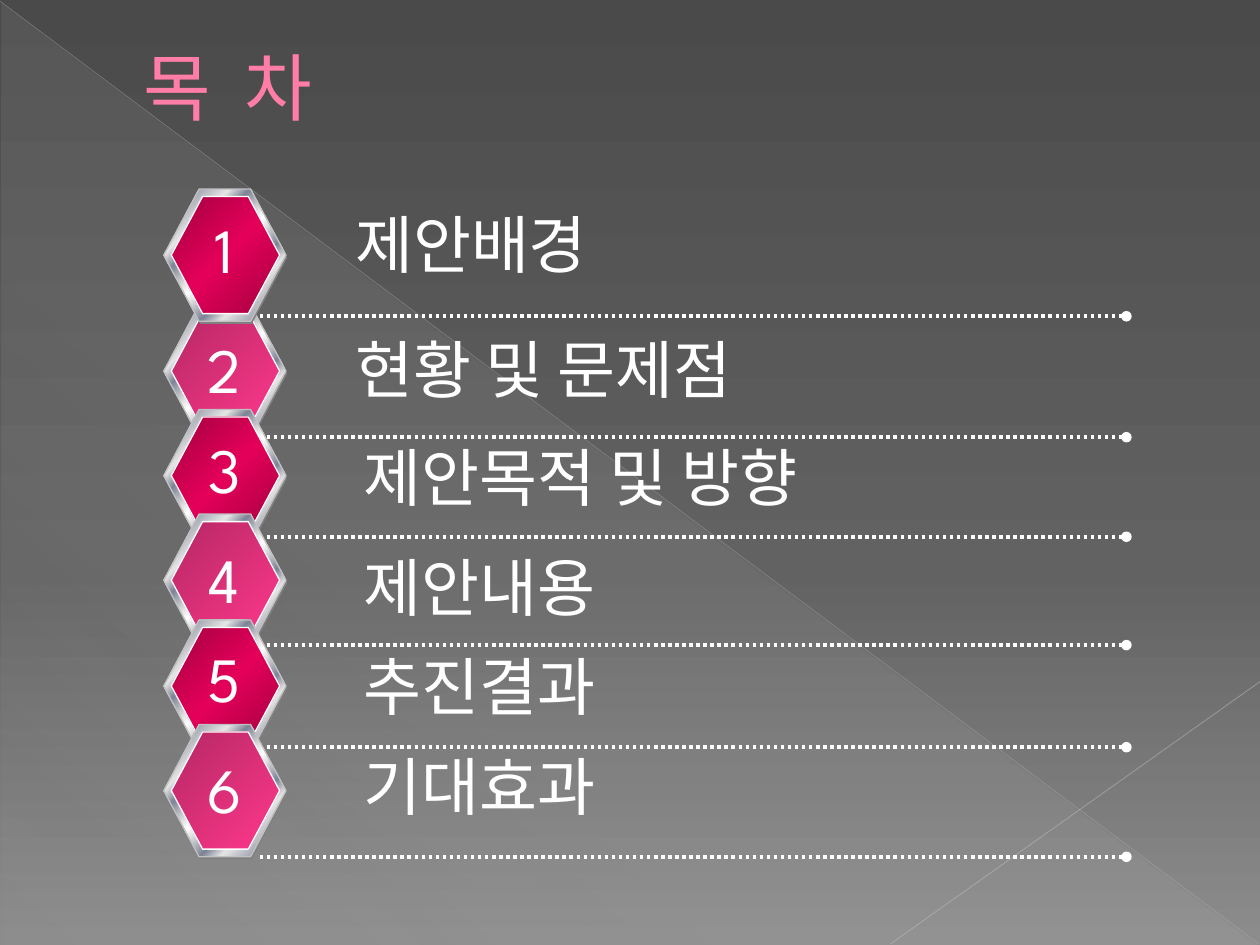
import typing
from dataclasses import dataclass

import lxml.etree
import pptx
import pptx.dml.color
import pptx.enum.dml
import pptx.enum.shapes
import pptx.enum.text
import pptx.oxml.ns
import pptx.util

RGB = pptx.dml.color.RGBColor
SHAPE = pptx.enum.shapes.MSO_SHAPE
PX = 9144  # EMU per px, 100 px to the inch

WHITE = RGB(0xFF, 0xFF, 0xFF)
TITLE_PINK = RGB(0xFF, 0x7D, 0xA7)
SHADE_GRAY = RGB(0x80, 0x80, 0x80)
RIM_GRAY = RGB(0xC0, 0xC0, 0xC0)
LONG_LINE_GRAY = RGB(0xBF, 0xBF, 0xBF)
SHORT_LINE_GRAY = RGB(0xC6, 0xC6, 0xC6)
VEIL_GRAY = RGB(0xD2, 0xD2, 0xD2)
SILVER = RGB(0xE6, 0xE6, 0xE6)
STEEL = RGB(0x7D, 0x84, 0x96)
CRIMSON_DARK = RGB(0xA3, 0x00, 0x40)
CRIMSON = RGB(0xE4, 0x00, 0x59)
PINK_DARK = RGB(0xB6, 0x28, 0x64)
PINK = RGB(0xFF, 0x38, 0x8C)

KOREAN_FONT = "Noto Sans CJK KR"
NUMBER_FONT = "League Spartan"


class Stop(typing.NamedTuple):
    position: int
    color: RGB
    opacity: int = 100


BACKGROUND = [Stop(0, RGB(0x4A, 0x4A, 0x4A)), Stop(60, RGB(0x62, 0x62, 0x62)),
              Stop(100, RGB(0x8C, 0x8C, 0x8C))]
VEIL = [Stop(0, VEIL_GRAY, 10), Stop(70, VEIL_GRAY, 8), Stop(100, VEIL_GRAY, 1)]
METAL_HALF = [Stop(0, SILVER), Stop(7, STEEL), Stop(26, SILVER), Stop(34, STEEL), Stop(46, SILVER)]
METAL = (METAL_HALF + [Stop(50, WHITE)]
         + [Stop(100 - s.position, s.color) for s in reversed(METAL_HALF)])
CRIMSON_FACE = [Stop(0, CRIMSON_DARK), Stop(50, CRIMSON), Stop(100, CRIMSON_DARK)]
PINK_FACE = [Stop(0, PINK_DARK), Stop(100, PINK)]


@dataclass(frozen=True)
class Box:
    left: int
    top: int
    width: int
    height: int

    def emu(self) -> list[int]:
        return [v * PX for v in (self.left, self.top, self.width, self.height)]


@dataclass(frozen=True)
class Entry:
    """One row of the contents; tops and rule are px from the slide top."""
    number: int
    heading: str
    heading_left: int
    heading_top: int
    badge_top: int
    number_top: int
    rule: int


# The first entry lies in front of the others.
ENTRIES = [
    Entry(2, "현황 및 문제점", 272, 257, 242, 257, 347),
    Entry(3, "제안목적 및 방향", 279, 343, 325, 337, 426),
    Entry(4, "제안내용", 279, 430, 408, 424, 512),
    Entry(5, "추진결과", 279, 509, 492, 503, 593),
    Entry(6, "기대효과", 279, 588, 575, 591, 680),
    Entry(1, "제안배경", 272, 158, 150, 162, 251),
]


def add_xml(parent, tag: str, **attributes: str):
    return lxml.etree.SubElement(parent, pptx.oxml.ns.qn(tag), **attributes)


def add_color(parent, color: RGB, opacity: int) -> None:
    srgb = add_xml(parent, "a:srgbClr", val=str(color))
    if opacity < 100:
        add_xml(srgb, "a:alpha", val=str(opacity * 1000))


def set_gradient(fill, stops: list[Stop], clockwise: int) -> None:
    fill.gradient()
    fill.gradient_angle = 360 - clockwise
    stop_list = fill._fill._gradFill.find(pptx.oxml.ns.qn("a:gsLst"))
    for old in list(stop_list):
        stop_list.remove(old)
    for stop in stops:
        add_color(add_xml(stop_list, "a:gs", pos=str(stop.position * 1000)),
                  stop.color, stop.opacity)


def add_preset(shapes, preset: SHAPE, box: Box):
    shape = shapes.add_shape(preset, *box.emu())
    shape.shadow.inherit = False
    shape.line.fill.background()
    return shape


def add_line(shapes, start: tuple[int, int], end: tuple[int, int],
             color: RGB, width: float, opacity: int = 100):
    line = shapes.add_connector(pptx.enum.shapes.MSO_CONNECTOR.STRAIGHT,
                                *[v * PX for v in start + end])
    line.line.width = pptx.util.Pt(width)
    line.line.color.rgb = color
    if opacity < 100:
        srgb = line.line._ln.find(".//" + pptx.oxml.ns.qn("a:srgbClr"))
        add_xml(srgb, "a:alpha", val=str(opacity * 1000))
    add_xml(line._element.spPr, "a:effectLst")
    return line


def add_text(shapes, box: Box, text: str, size: int, font: str, color: RGB, wrap: bool = True):
    textbox = shapes.add_textbox(*box.emu())
    frame = textbox.text_frame
    frame.word_wrap = wrap
    run = frame.paragraphs[0].add_run()
    run.text = text
    run.font.size = pptx.util.Pt(size)
    run.font.color.rgb = color
    run.font.name = font
    add_xml(run.font._element, "a:ea", typeface=font)
    return frame


def add_hexagon(shapes, box: Box):
    hexagon = add_preset(shapes, SHAPE.HEXAGON, box)
    hexagon.adjustments[0] = 0.289
    return hexagon


def outline(shape, color: RGB) -> None:
    shape.line.color.rgb = color
    shape.line.width = pptx.util.Pt(0.75)


def add_badge(shapes, top: int, face_stops: list[Stop]) -> None:
    shade = add_hexagon(shapes, Box(131, top + 2, 97, 105))
    shade.fill.solid()
    shade.fill.fore_color.rgb = SHADE_GRAY
    rim = add_hexagon(shapes, Box(130, top, 97, 105))
    set_gradient(rim.fill, METAL, 45)
    outline(rim, RIM_GRAY)
    face = add_hexagon(shapes, Box(136, top + 6, 86, 93))
    set_gradient(face.fill, face_stops, 45)
    outline(face, WHITE)


def add_entry(slide, entry: Entry) -> None:
    shapes = slide.shapes.add_group_shape().shapes
    rule = add_line(shapes, (206, entry.rule), (894, entry.rule), WHITE, 2)
    rule.line.dash_style = pptx.enum.dml.MSO_LINE.ROUND_DOT
    add_xml(rule.line._ln, "a:tailEnd", type="oval")
    heading = add_text(shapes, Box(entry.heading_left, entry.heading_top, 557, 71),
                       entry.heading, 36, KOREAN_FONT, WHITE)
    heading.auto_size = pptx.enum.text.MSO_AUTO_SIZE.SHAPE_TO_FIT_TEXT
    add_badge(shapes, entry.badge_top, CRIMSON_FACE if entry.number % 2 else PINK_FACE)
    number = add_text(shapes, Box(154, entry.number_top, 48, 71),
                      str(entry.number), 36, NUMBER_FONT, WHITE, wrap=False)
    number.auto_size = pptx.enum.text.MSO_AUTO_SIZE.SHAPE_TO_FIT_TEXT
    number.paragraphs[0].alignment = pptx.enum.text.PP_ALIGN.CENTER


def add_backdrop(slide) -> None:
    set_gradient(slide.background.fill, BACKGROUND, 90)
    veil = add_preset(slide.shapes, SHAPE.RIGHT_TRIANGLE, Box(1, 2, 998, 748))
    set_gradient(veil.fill, VEIL, 133)
    add_line(slide.shapes, (0, 1), (999, 749), LONG_LINE_GRAY, 0.39, 35)
    add_line(slide.shapes, (1000, 541), (707, 749), SHORT_LINE_GRAY, 0.47, 45)


def add_title(slide) -> None:
    title = add_text(slide.shapes, Box(51, 21, 900, 94), "목  차", 42, KOREAN_FONT, TITLE_PINK)
    title.vertical_anchor = pptx.enum.text.MSO_ANCHOR.MIDDLE
    title.margin_left += 53 * PX


def main() -> None:
    deck = pptx.Presentation()
    deck.slide_width, deck.slide_height = 1000 * PX, 750 * PX
    slide = deck.slides.add_slide(deck.slide_layouts[6])
    add_backdrop(slide)
    add_title(slide)
    for entry in ENTRIES:
        add_entry(slide, entry)
    deck.save("out.pptx")


if __name__ == "__main__":
    main()
